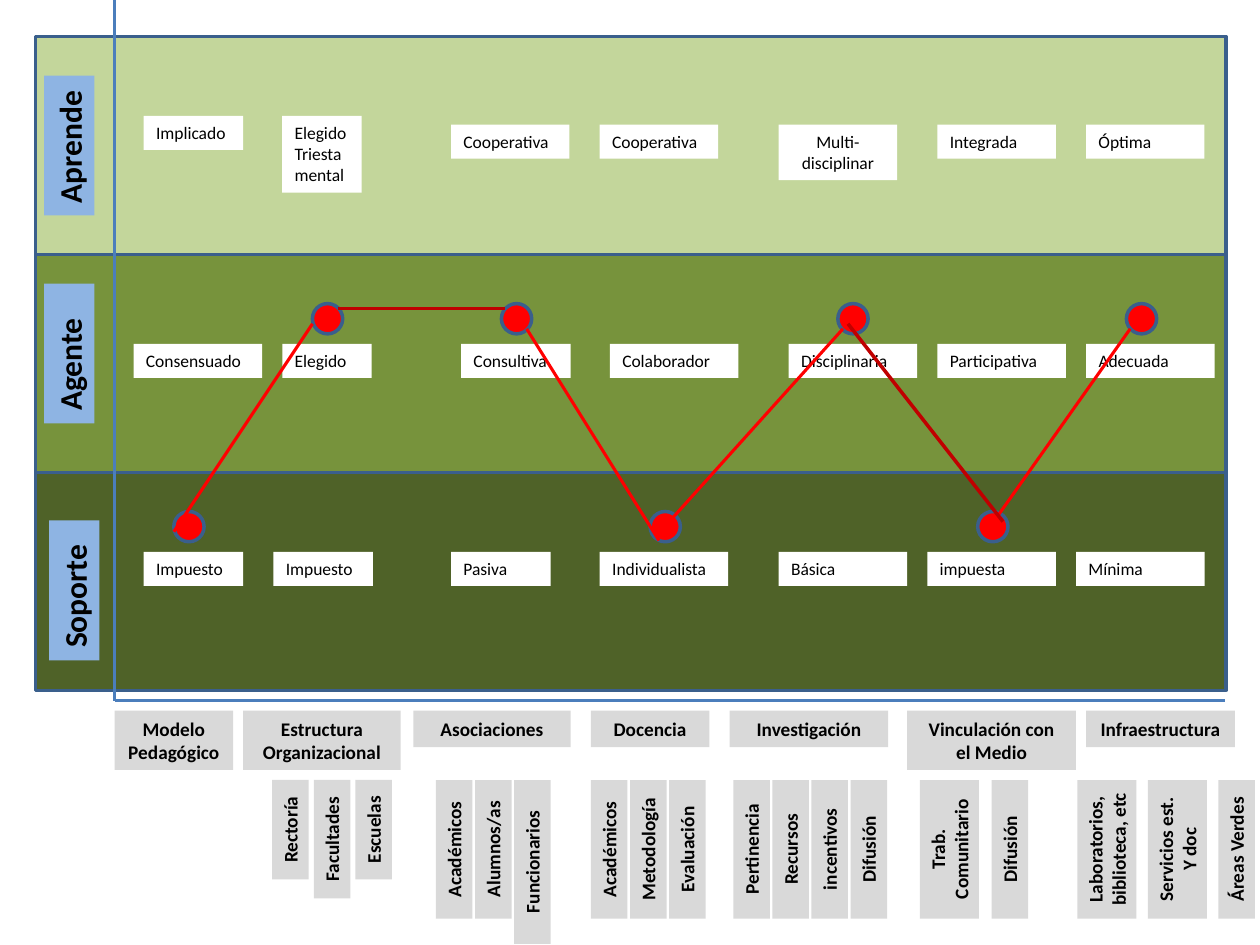
from dataclasses import dataclass

from lxml.etree import SubElement
from pptx import Presentation
from pptx.dml.color import RGBColor
from pptx.enum.shapes import MSO_CONNECTOR, MSO_SHAPE
from pptx.enum.text import MSO_AUTO_SIZE, PP_ALIGN
from pptx.oxml.ns import qn
from pptx.util import Inches, Pt


@dataclass(frozen=True)
class Theme:
    """Colours, font and sizes of the slide."""
    font: str = "Calibri"
    ink: str = "000000"
    outline: str = "3A5F8C"
    axis: str = "4B7EBC"
    level_label: str = "8EB4E3"
    state: str = "FFFFFF"
    dimension: str = "D9D9D9"
    route: str = "FF0000"
    dark_route: str = "C00000"
    learner: str = "C3D69B"
    agent: str = "77933C"
    support: str = "4F6228"
    level_size: int = 18
    dimension_size: int = 11
    state_size: int = 10
    line_width: float = 2
    route_width: float = 1.75


THEME = Theme()

LEVELS = [
    ("Aprende", THEME.learner, 0.27, 0.31, [
        ("Implicado", 0.86, 0.63, 0.79, 0.27),
        ("Elegido\nTriestamental", 1.96, 0.63, 0.63, 0.61),
        ("Cooperativa", 3.3, 0.7, 0.94, 0.27),
        ("Cooperativa", 4.48, 0.7, 0.94, 0.27),
        ("Multi-disciplinar", 5.9, 0.7, 0.94, 0.44),
        ("Integrada", 7.16, 0.7, 0.94, 0.27),
        ("Óptima", 8.34, 0.7, 0.94, 0.27)]),
    ("Agente", THEME.agent, 0.27, 0.23, [
        ("Consensuado", 0.78, 0.71, 1.02, 0.27),
        ("Elegido", 1.96, 0.71, 0.71, 0.27),
        ("Consultiva", 3.38, 0.71, 0.87, 0.27),
        ("Colaborador", 4.56, 0.71, 1.02, 0.27),
        ("Disciplinaria", 5.98, 0.71, 1.02, 0.27),
        ("Participativa", 7.16, 0.71, 1.02, 0.27),
        ("Adecuada", 8.34, 0.71, 1.02, 0.27)]),
    ("Soporte", THEME.support, 0.31, 0.38, [
        ("Impuesto", 0.86, 0.63, 0.79, 0.27),
        ("Impuesto", 1.89, 0.63, 0.79, 0.27),
        ("Pasiva", 3.3, 0.63, 0.79, 0.27),
        ("Individualista", 4.48, 0.63, 1.02, 0.27),
        ("Básica", 5.9, 0.63, 1.02, 0.27),
        ("impuesta", 7.08, 0.63, 1.02, 0.27),
        ("Mínima", 8.26, 0.63, 1.02, 0.27)]),
]

DIMENSIONS = [
    ("Modelo Pedagógico", 0.91, 0.94, 0.47, 0, 0, []),
    ("Estructura Organizacional", 1.93, 1.25, 0.47, 0.23, 0.33, [
        ("Rectoría", 0.29, 0.79), ("Facultades", 0.29, 0.94),
        ("Escuelas", 0.29, 0.79)]),
    ("Asociaciones", 3.28, 1.25, 0.29, 0.18, 0.31, [
        ("Académicos", 0.29, 1.1), ("Alumnos/as", 0.29, 1.1),
        ("Funcionarios", 0.29, 1.3)]),
    ("Docencia", 4.69, 0.94, 0.29, 0, 0.31, [
        ("Académicos", 0.29, 1.1), ("Metodología", 0.29, 1.1),
        ("Evaluación", 0.29, 1.1)]),
    ("Investigación", 5.79, 1.26, 0.29, 0.03, 0.31, [
        ("Pertinencia", 0.29, 1.1), ("Recursos", 0.29, 1.1),
        ("incentivos", 0.29, 1.1), ("Difusión", 0.29, 1.1)]),
    ("Vinculación con el Medio", 7.2, 1.34, 0.47, 0.1, 0.57, [
        ("Trab. Comunitario", 0.47, 1.1), ("Difusión", 0.29, 1.1)]),
    ("Infraestructura", 8.62, 1.18, 0.29, -0.07, 0.56, [
        ("Laboratorios, biblioteca, etc", 0.47, 1.1),
        ("Servicios est. Y doc", 0.47, 1.1), ("Áreas Verdes", 0.29, 1.1)]),
]

AGENT_STOP, SUPPORT_STOP = 2.12, 3.77
STOPS = [(1.1, SUPPORT_STOP), (2.2, AGENT_STOP), (3.7, AGENT_STOP),
         (4.88, SUPPORT_STOP), (6.37, AGENT_STOP), (7.48, SUPPORT_STOP),
         (8.66, AGENT_STOP)]
BRIGHT_LEGS = [(1.1, 3.93, 2.2, 2.28), (4.96, 3.93, 6.41, 2.32),
               (7.55, 3.93, 8.69, 2.32), (4.95, 4, 3.9, 2.32)]
DARK_LEGS = [(2.4, 2.16, 3.73, 2.16), (6.45, 2.28, 7.68, 3.85)]


def color(code):
    """Turn a hex code into a colour."""
    return RGBColor.from_string(code)


def add_label(slide, text, box, *, fill, size, bold=False,
              align=PP_ALIGN.LEFT, upright=False):
    """Fill the visible box with text, reading upwards when upright."""
    left, top, width, height = box
    if upright:
        left, top = left + (width - height) / 2, top + (height - width) / 2
        width, height = height, width
    label = slide.shapes.add_textbox(*map(Inches, (left, top, width, height)))
    label.rotation = 270 if upright else 0
    label.fill.solid()
    label.fill.fore_color.rgb = color(fill)
    frame = label.text_frame
    frame.word_wrap = True
    frame.auto_size = MSO_AUTO_SIZE.SHAPE_TO_FIT_TEXT
    frame.text = text
    for paragraph in frame.paragraphs:
        paragraph.alignment = align
        font = paragraph.runs[0].font
        font.name, font.size, font.bold = THEME.font, Pt(size), bold
        font.color.rgb = color(THEME.ink)


def add_figure(slide, preset, box, fill):
    """Add an outlined preset shape."""
    figure = slide.shapes.add_shape(preset, *map(Inches, box))
    figure.shadow.inherit = False
    figure.fill.solid()
    figure.fill.fore_color.rgb = color(fill)
    figure.line.color.rgb = color(THEME.outline)
    figure.line.width = Pt(THEME.line_width)


def add_line(slide, ends, stroke, width):
    """Add a straight line without shadow."""
    line = slide.shapes.add_connector(MSO_CONNECTOR.STRAIGHT, *map(Inches, ends))
    line.line.color.rgb = color(stroke)
    line.line.width = Pt(width)
    SubElement(line._element.spPr, qn("a:effectLst"))


def add_level(slide, box, name, fill, name_left, name_top, states):
    """Draw one level band with its name and states."""
    left, top = box[:2]
    add_figure(slide, MSO_SHAPE.RECTANGLE, box, fill)
    add_label(slide, name, (left + name_left - 0.2, top + name_top, 0.4, 1.11),
              fill=THEME.level_label, size=THEME.level_size, bold=True,
              upright=True)
    for state, dx, dy, width, height in states:
        align = PP_ALIGN.CENTER if state.startswith("Multi") else PP_ALIGN.LEFT
        add_label(slide, state, (left + dx, top + dy, width, height),
                  fill=THEME.state, size=THEME.state_size, align=align)


def add_axes(slide, box):
    """Draw the vertical and horizontal axes on the box's left and bottom."""
    left, top, width, height = box
    bottom = top + height
    for ends in [(left, bottom, left + width, bottom), (left, top, left, bottom)]:
        add_line(slide, ends, THEME.axis, THEME.line_width)


def add_dimension(slide, box, name, start, pitch, factors):
    """Draw a dimension heading with its upright factors below."""
    left, top = box[:2]
    style = dict(fill=THEME.dimension, size=THEME.dimension_size, bold=True,
                 align=PP_ALIGN.CENTER)
    add_label(slide, name, box, **style)
    for index, (factor, width, height) in enumerate(factors):
        place = (left + start + index * pitch, top + 0.55, width, height)
        add_label(slide, factor, place, upright=True, **style)


def add_route(slide, box):
    """Draw the stops and the legs that join them."""
    left, top = box[:2]
    for x, y in STOPS:
        add_figure(slide, MSO_SHAPE.OVAL, (left + x, top + y, 0.24, 0.24),
                   THEME.route)
    for legs, stroke, width in [(BRIGHT_LEGS, THEME.route, THEME.route_width),
                                (DARK_LEGS, THEME.dark_route, THEME.line_width)]:
        for x1, y1, x2, y2 in legs:
            add_line(slide, (left + x1, top + y1, left + x2, top + y2),
                     stroke, width)


def main():
    """Build and save the slide."""
    deck = Presentation()
    deck.slide_width, deck.slide_height = Inches(10), Inches(7.5)
    slide = deck.slides.add_slide(deck.slide_layouts[6])
    left, top, width, height = 0.28, 0.29, 9.45, 1.73
    for index, level in enumerate(LEVELS):
        add_level(slide, (left, top + index * height, width, height), *level)
    add_axes(slide, (0.91, -0.03, 8.81, 5.59))
    for name, x, wide, high, start, pitch, factors in DIMENSIONS:
        add_dimension(slide, (x, 5.64, wide, high), name, start, pitch, factors)
    add_route(slide, (left, top, width, 3 * height))
    deck.save("out.pptx")


if __name__ == "__main__":
    main()
